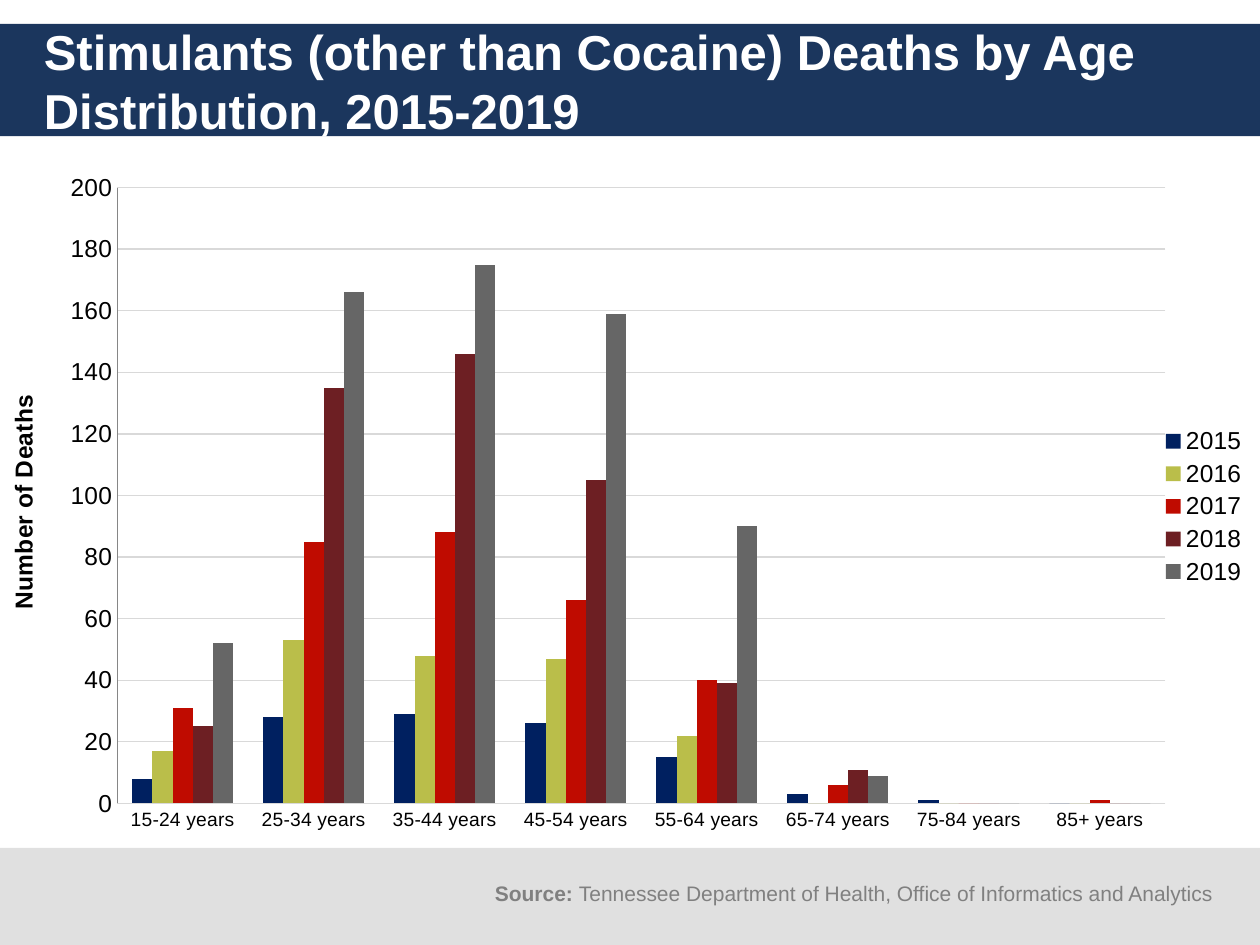
from lxml import etree
from pptx import Presentation
from pptx.chart.data import CategoryChartData
from pptx.dml.color import RGBColor
from pptx.enum.chart import XL_CHART_TYPE, XL_LEGEND_POSITION, XL_TICK_MARK
from pptx.enum.shapes import MSO_SHAPE
from pptx.enum.text import MSO_ANCHOR
from pptx.oxml.ns import qn
from pptx.util import Inches, Pt

COLUMNS = XL_CHART_TYPE.COLUMN_CLUSTERED
RIGHT = XL_LEGEND_POSITION.RIGHT
NO_TICK = XL_TICK_MARK.NONE
RECTANGLE = MSO_SHAPE.RECTANGLE
MIDDLE, TOP = MSO_ANCHOR.MIDDLE, MSO_ANCHOR.TOP

COLORS = {
    "navy": "1B365D",
    "footer": "E0E0E0",
    "white": "FFFFFF",
    "source": "808080",
    "black": "000000",
    "grid": "D9D9D9",
    "axis": "868686",
}
AGES = ["15-24 years", "25-34 years", "35-44 years", "45-54 years",
        "55-64 years", "65-74 years", "75-84 years", "85+ years"]
DEATHS = {
    "2015": ("002060", [8, 28, 29, 26, 15, 3, 1, 0]),
    "2016": ("BABE4A", [17, 53, 48, 47, 22, 0, 0, 0]),
    "2017": ("BF0B00", [31, 85, 88, 66, 40, 6, 0, 1]),
    "2018": ("6D1F23", [25, 135, 146, 105, 39, 11, 0, 0]),
    "2019": ("666666", [52, 166, 175, 159, 90, 9, 0, 0]),
}
PLOT_AREA = {"x": 0.093, "y": 0.033, "w": 0.832, "h": 0.902}


def rgb(name):
    return RGBColor.from_string(COLORS[name])


def style_font(font, size, color="black", bold=False):
    values = {"name": "Arial", "size": Pt(size), "bold": bold}
    for name, value in values.items():
        setattr(font, name, value)
    font.color.rgb = rgb(color)


def style_line(line, color):
    line.color.rgb = rgb(color)
    line.width = Pt(0.75)


def add_band(page, top, height, color):
    band = page.shapes.add_shape(
        RECTANGLE, 0, Inches(top), Inches(10), Inches(height))
    band.shadow.inherit = False
    band.fill.solid()
    band.fill.fore_color.rgb = rgb(color)
    band.line.fill.background()


def add_text(page, place, spans, size, color, anchor):
    box = page.shapes.add_textbox(*[Inches(length) for length in place])
    frame = box.text_frame
    frame.word_wrap = True
    frame.vertical_anchor = anchor
    para = frame.paragraphs[0]
    for text, bold in spans:
        span = para.add_run()
        span.text = text
        style_font(span.font, size, color, bold)


def place_plot(chart):
    plot_area = chart.plots[0]._element.getparent()
    layout = plot_area.find(qn("c:layout"))
    if layout is None:
        layout = etree.Element(qn("c:layout"))
        plot_area.insert(0, layout)
    manual = etree.SubElement(layout, qn("c:manualLayout"))
    settings = {"layoutTarget": "inner", "xMode": "edge", "yMode": "edge"}
    for name, value in {**settings, **PLOT_AREA}.items():
        etree.SubElement(manual, qn(f"c:{name}")).set("val", str(value))


def style_axis(axis, size, line_color):
    axis.major_tick_mark = NO_TICK
    axis.minor_tick_mark = NO_TICK
    style_font(axis.tick_labels.font, size)
    style_line(axis.format.line, line_color)


def add_deaths_chart(page):
    data = CategoryChartData()
    data.categories = AGES
    for year, (color, values) in DEATHS.items():
        data.add_series(year, values)
    chart = page.shapes.add_chart(
        COLUMNS, 0, Inches(1.31), Inches(10), Inches(5.42), data).chart
    style_font(chart.font, 10)
    chart.has_title = False

    plot = chart.plots[0]
    plot.gap_width = 150
    plot.overlap = 0
    plot.vary_by_categories = False
    for series, (color, values) in zip(plot.series, DEATHS.values()):
        series.format.fill.solid()
        series.format.fill.fore_color.rgb = RGBColor.from_string(color)
        series.invert_if_negative = False

    style_axis(chart.category_axis, 11, "grid")
    value_axis = chart.value_axis
    style_axis(value_axis, 14, "axis")
    scale = {"minimum_scale": 0, "maximum_scale": 200, "major_unit": 20}
    for name, value in scale.items():
        setattr(value_axis, name, value)
    style_line(value_axis.major_gridlines.format.line, "grid")
    para = value_axis.axis_title.text_frame.paragraphs[0]
    span = para.add_run()
    span.text = "Number of Deaths"
    style_font(span.font, 14, bold=True)

    chart.has_legend = True
    chart.legend.position = RIGHT
    chart.legend.include_in_layout = False
    style_font(chart.legend.font, 14)
    place_plot(chart)


def main():
    deck = Presentation()
    deck.slide_width, deck.slide_height = Inches(10), Inches(7.5)
    page = deck.slides.add_slide(deck.slide_layouts[6])
    add_band(page, 0.19, 0.89, "navy")
    add_band(page, 6.73, 0.77, "footer")
    title = "Stimulants (other than Cocaine) Deaths by Age Distribution, 2015-2019"
    add_text(page, (0.25, 0.19, 9.75, 0.9), [(title, True)],
             28, "white", MIDDLE)
    add_deaths_chart(page)
    source = "Tennessee Department of Health, Office of Informatics and Analytics"
    add_text(page, (3.83, 6.94, 6, 0.3),
             [("Source: ", True), (source, False)], 12, "source", TOP)
    deck.save("out.pptx")


if __name__ == "__main__":
    main()
